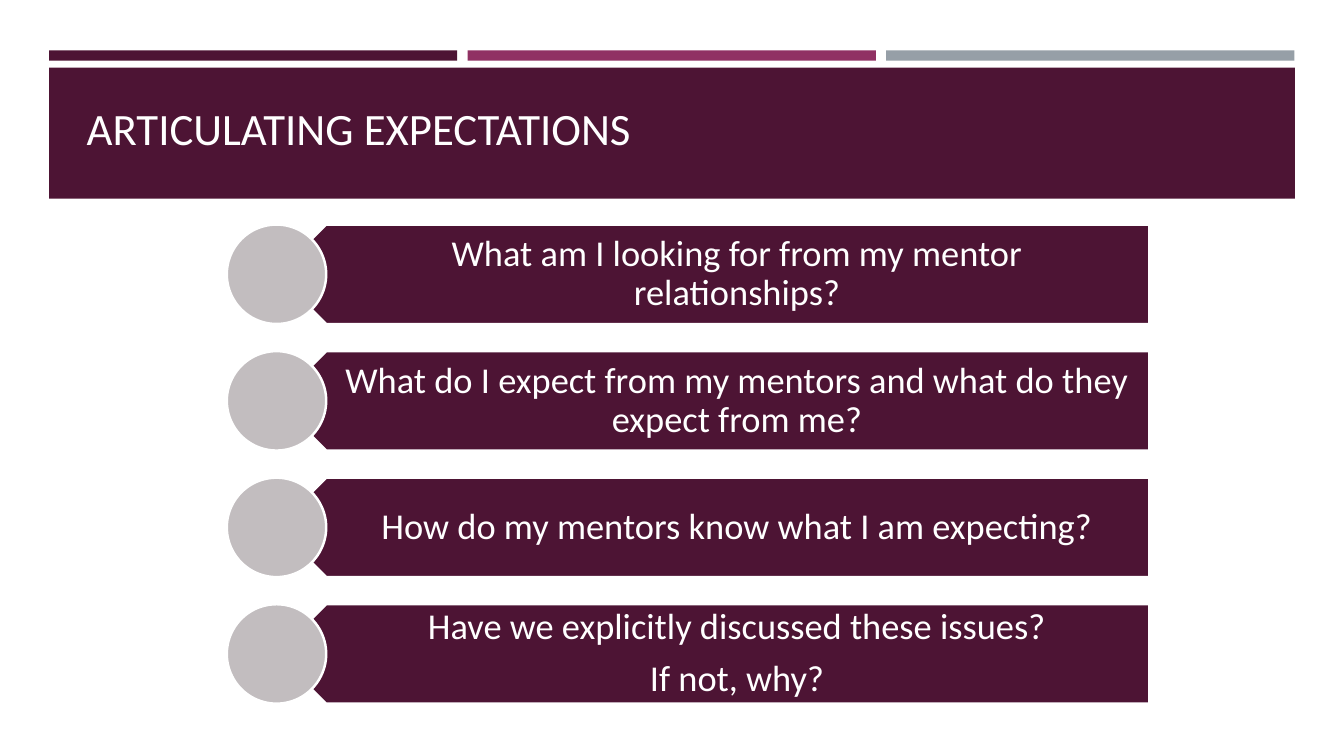
import pptx
import pptx.dml.color
import pptx.enum.shapes
import pptx.enum.text
import pptx.util

Pt = pptx.util.Pt
RGBColor = pptx.dml.color.RGBColor
Shape = pptx.enum.shapes.MSO_SHAPE
Anchor = pptx.enum.text.MSO_ANCHOR
Align = pptx.enum.text.PP_ALIGN

PLUM = RGBColor(0x4D, 0x14, 0x34)
MAGENTA = RGBColor(0x90, 0x31, 0x63)
SLATE = RGBColor(0x96, 0x9F, 0xA7)
PALE = RGBColor(0xC2, 0xBD, 0xBF)
WHITE = RGBColor(0xFF, 0xFF, 0xFF)

QUESTIONS = [
    ["What am I looking for from my mentor relationships?"],
    ["What do I expect from my mentors and what do they expect from me?"],
    ["How do my mentors know what I am expecting?"],
    ["Have we explicitly discussed these issues?", "If not, why?"],
]


class SlideBuilder:
    """Holds the style and the current slide."""

    font = "Calibri"
    outline = 1.75

    def __init__(self, slide):
        self.slide = slide

    def paint(self, shape, fill, outlined):
        shape.shadow.inherit = False
        shape.fill.solid()
        shape.fill.fore_color.rgb = fill
        if outlined:
            shape.line.color.rgb = WHITE
            shape.line.width = Pt(self.outline)
        else:
            shape.line.fill.background()

    def set_text(self, frame, lines, size, align, anchor, insets):
        frame.word_wrap = True
        frame.auto_size = pptx.enum.text.MSO_AUTO_SIZE.NONE
        frame.vertical_anchor = anchor
        (frame.margin_left, frame.margin_top,
         frame.margin_right, frame.margin_bottom) = map(Pt, insets)
        frame.text = "\n".join(lines)
        for paragraph in frame.paragraphs:
            paragraph.alignment = align
            paragraph.line_spacing = 0.9
            paragraph.space_after = Pt(0.35 * size)
            paragraph.font.name = self.font
            paragraph.font.size = Pt(size)
            paragraph.font.color.rgb = WHITE

    def block(self, kind, x, y, width, height, fill, outlined=False):
        shape = self.slide.shapes.add_shape(
            kind, Pt(x), Pt(y), Pt(width), Pt(height))
        self.paint(shape, fill, outlined)

    def title(self, text, x, y, width, height):
        heading = self.slide.shapes.title
        heading.left, heading.top = Pt(x), Pt(y)
        heading.width, heading.height = Pt(width), Pt(height)
        self.set_text(heading.text_frame, [text], 32, Align.LEFT,
                      Anchor.BOTTOM, (7.2, 3.6, 7.2, 3.6))
        # Bring the heading in front of its band
        self.slide.shapes._spTree.append(heading._element)

    def arrow(self, lines, x, y, width, height):
        right, shoulder = x + width, x + height / 2
        outline = self.slide.shapes.build_freeform(Pt(right), Pt(y + height))
        outline.add_line_segments([
            (Pt(shoulder), Pt(y + height)),
            (Pt(x), Pt(y + height / 2)),
            (Pt(shoulder), Pt(y)),
            (Pt(right), Pt(y)),
        ], close=True)
        arrow = outline.convert_to_shape()
        self.paint(arrow, PLUM, True)
        self.set_text(arrow.text_frame, lines, 26, Align.CENTER,
                      Anchor.MIDDLE, (49, 8, 14.4, 8))


def main():
    deck = pptx.Presentation()
    deck.slide_width, deck.slide_height = Pt(960), Pt(540)
    builder = SlideBuilder(deck.slides.add_slide(deck.slide_layouts[5]))

    # Stripes and heading band
    for index, colour in enumerate([PLUM, MAGENTA, SLATE]):
        builder.block(Shape.RECTANGLE, 35 + 299 * index, 36, 291.6, 7.4, colour)
    builder.block(Shape.RECTANGLE, 35, 48.4, 890, 93.6, PLUM)
    builder.title("ARTICULATING EXPECTATIONS", 54.7, 68.4, 828, 46)

    # Questions, each with its disc
    disc = 71
    for index, question in enumerate(QUESTIONS):
        top = 160.4 + 90.4 * index
        builder.arrow(question, 197.5, top, 623.5, disc)
        builder.block(Shape.OVAL, 162, top, disc, disc, PALE, outlined=True)

    deck.save("out.pptx")


if __name__ == "__main__":
    main()
